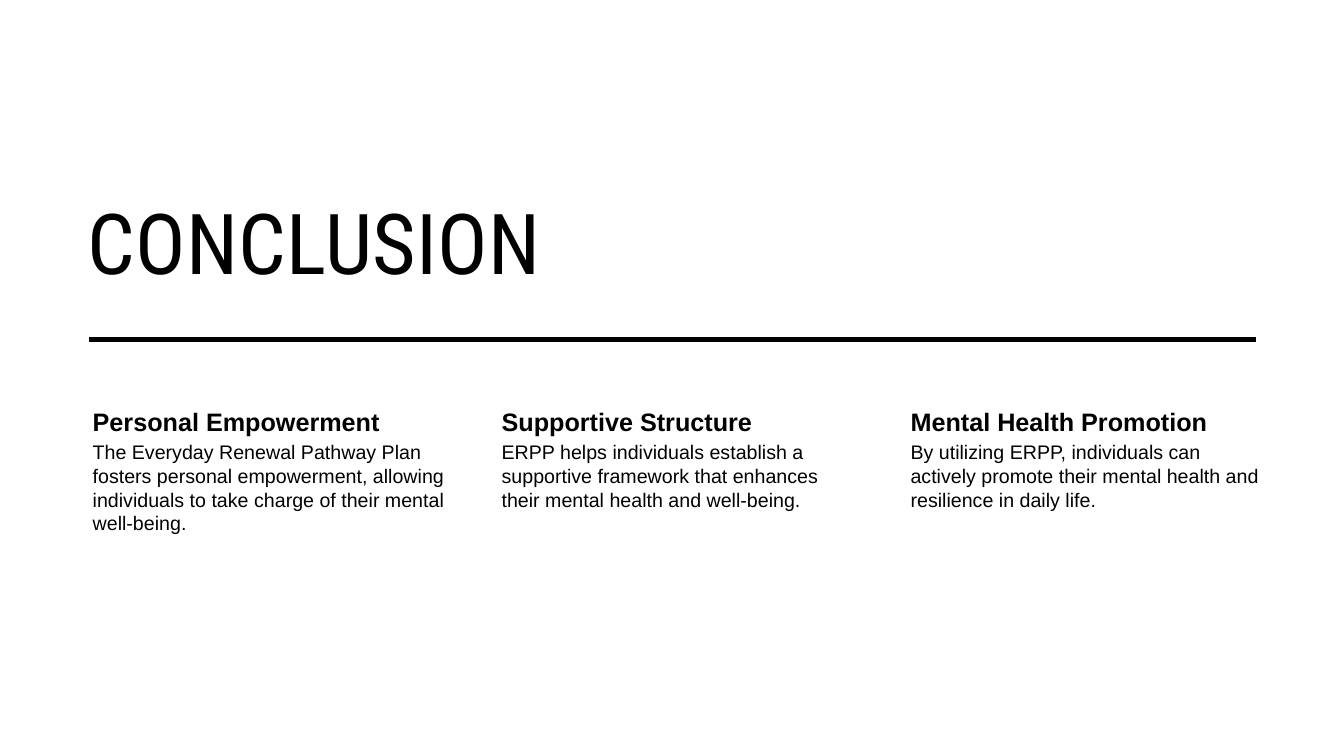
from dataclasses import dataclass

from pptx import Presentation
from pptx.dml.color import RGBColor
from pptx.enum import shapes, text
from pptx.oxml import parse_xml
from pptx.oxml.ns import nsdecls
from pptx.shapes.shapetree import GroupShapes
from pptx.util import Pt

BLACK = RGBColor(0x00, 0x00, 0x00)
WHITE = RGBColor(0xFF, 0xFF, 0xFF)

LEFT = 55.4
COLUMN_WIDTH = 265.7
COLUMN_STEP = 292.1
HEADING_TOP = 288
HEADING_HEIGHT = 25.2
DETAIL_HEIGHT = 168.5


@dataclass
class Takeaway:
    heading: str
    detail: str


TAKEAWAYS = [
    Takeaway(
        "Personal Empowerment",
        "The Everyday Renewal Pathway Plan fosters personal empowerment, "
        "allowing individuals to take charge of their mental well-being.",
    ),
    Takeaway(
        "Supportive Structure",
        "ERPP helps individuals establish a supportive framework that "
        "enhances their mental health and well-being.",
    ),
    Takeaway(
        "Mental Health Promotion",
        "By utilizing ERPP, individuals can actively promote their mental "
        "health and resilience in daily life.",
    ),
]


def add_title(s, words: str) -> None:
    title = s.shapes.title
    title.left, title.top = Pt(LEFT), Pt(100.8)
    title.width, title.height = Pt(629.3), Pt(110.9)
    tf = title.text_frame
    tf.text = words
    tf.auto_size = text.MSO_AUTO_SIZE.NONE
    tf.vertical_anchor = text.MSO_ANCHOR.BOTTOM
    p = tf.paragraphs[0]
    p.alignment = text.PP_ALIGN.LEFT
    p.font.name = "Roboto Condensed"
    p.font.size = Pt(60)
    p.font.color.rgb = BLACK
    p.runs[0].font._element.set("spc", "30")


def add_text(parent: GroupShapes, words: str, left: float, top: float,
             height: float, inset: float, size: float, bold: bool) -> None:
    box = parent.add_textbox(Pt(left), Pt(top), Pt(COLUMN_WIDTH), Pt(height))
    tf = box.text_frame
    tf.word_wrap = True
    tf.margin_left = Pt(10.8)
    tf.margin_top = tf.margin_right = tf.margin_bottom = Pt(inset)
    p = tf.paragraphs[0]
    p.text = words
    p.font.name = "Arial"
    p.font.size = Pt(size)
    p.font.bold = bold
    p.font.color.rgb = BLACK


def add_takeaways(s) -> None:
    columns = s.shapes.add_group_shape().shapes
    for i, takeaway in enumerate(TAKEAWAYS):
        left = LEFT + i * COLUMN_STEP
        add_text(columns, takeaway.heading, left, HEADING_TOP,
                 HEADING_HEIGHT, inset=2.2, size=18, bold=True)
        add_text(columns, takeaway.detail, left, HEADING_TOP + HEADING_HEIGHT,
                 DETAIL_HEIGHT, inset=1.4, size=14, bold=False)


def add_divider(s) -> None:
    y = Pt(242.6)
    divider = s.shapes.add_connector(
        shapes.MSO_CONNECTOR.STRAIGHT, Pt(63.4), y, Pt(897.1), y)
    divider.line.color.rgb = BLACK
    divider.line.width = Pt(3.5)
    divider._element.spPr.append(
        parse_xml(f"<a:effectLst {nsdecls('a')}/>"))


def main() -> None:
    prs = Presentation()
    prs.slide_width, prs.slide_height = Pt(960), Pt(540)
    s = prs.slides.add_slide(prs.slide_layouts.get_by_name("Title Only"))
    s.background.fill.solid()
    s.background.fill.fore_color.rgb = WHITE
    add_title(s, "CONCLUSION")
    add_takeaways(s)
    add_divider(s)
    prs.save("out.pptx")


if __name__ == "__main__":
    main()
